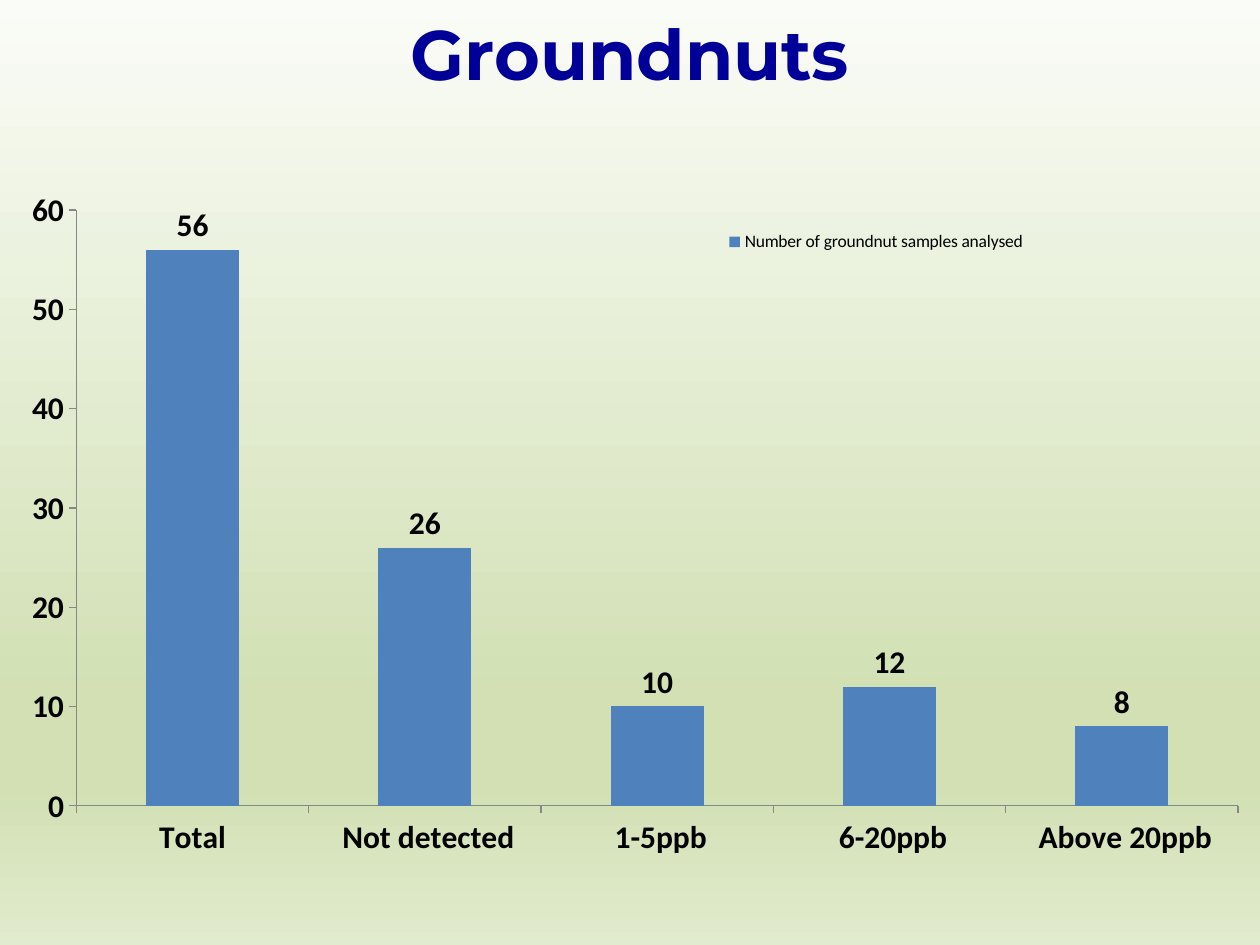
from dataclasses import dataclass

from lxml import etree
from pptx import Presentation, util as u
from pptx.chart.data import CategoryChartData
from pptx.dml.color import RGBColor
from pptx.enum import chart as charts, text
from pptx.oxml import parse_xml
from pptx.oxml.ns import nsdecls, qn

SCALE = u.Inches(1) / 126


@dataclass(frozen=True)
class Theme:
    title_font: str = "Montserrat"
    chart_font: str = "Calibri"
    title_color: str = "000099"
    text_color: str = "000000"
    bar_color: str = "4F81BD"
    axis_color: str = "878787"
    background: tuple = ((0, "FAFCF7"), (74, "D2E0B4"), (83, "D2E0B4"), (100, "E1EBCD"))
    title_size: int = 40
    label_size: int = 18
    legend_size: int = 10


def px(length):
    return u.Emu(round(length * SCALE))


def format_font(font, name, size, color, bold=False):
    font.name = name
    font.size = u.Pt(size)
    font.bold = bold
    font.color.rgb = RGBColor.from_string(color)


def write_text(frame, content, *, align, anchor, line_spacing=1.0, **font_format):
    frame.word_wrap = True
    frame.vertical_anchor = anchor
    paragraph = frame.paragraphs[0]
    paragraph.alignment = align
    paragraph.line_spacing = line_spacing
    run = paragraph.add_run()
    run.text = content
    format_font(run.font, **font_format)


def place_in_chart(element, index, chart_box, box, inner=False):
    for old_layout in element.findall(qn("c:layout")):
        element.remove(old_layout)
    left, top, width, height = chart_box
    values = {
        "x": (box[0] - left) / width,
        "y": (box[1] - top) / height,
        "w": box[2] / width,
        "h": box[3] / height,
    }
    layout = parse_xml(f"<c:layout {nsdecls('c')}><c:manualLayout/></c:layout>")
    manual = layout[0]
    settings = [("layoutTarget", "inner")] if inner else []
    settings += [("xMode", "edge"), ("yMode", "edge")]
    settings += [(key, f"{value:.4f}") for key, value in values.items()]
    for key, value in settings:
        etree.SubElement(manual, qn(f"c:{key}")).set("val", value)
    element.insert(index, layout)


class SlideBuilder:
    def __init__(self, slide, theme):
        self.slide = slide
        self.theme = theme

    def background(self):
        fill = self.slide.background.fill
        fill.gradient()
        fill.gradient_angle = 270
        stops = next(self.slide.element.iter(qn("a:gsLst")))
        for stop in list(stops):
            stops.remove(stop)
        for position, color in self.theme.background:
            stop = etree.SubElement(stops, qn("a:gs"), pos=str(position * 1000))
            etree.SubElement(stop, qn("a:srgbClr"), val=color)

    def title(self, content, box):
        shape = self.slide.shapes.add_textbox(*map(px, box))
        write_text(
            shape.text_frame,
            content,
            align=text.PP_ALIGN.CENTER,
            anchor=text.MSO_ANCHOR.MIDDLE,
            line_spacing=0.9,
            name=self.theme.title_font,
            size=self.theme.title_size,
            color=self.theme.title_color,
            bold=True,
        )

    def label_format(self, font):
        theme = self.theme
        format_font(font, theme.chart_font, theme.label_size, theme.text_color, bold=True)

    def axis(self, axis):
        axis.has_major_gridlines = False
        axis.major_tick_mark = charts.XL_TICK_MARK.OUTSIDE
        axis.minor_tick_mark = charts.XL_TICK_MARK.NONE
        axis.format.line.color.rgb = RGBColor.from_string(self.theme.axis_color)
        axis.format.line.width = u.Pt(0.75)
        self.label_format(axis.tick_labels.font)

    def column_chart(self, name, counts, box, plot_box, legend_box):
        theme = self.theme
        data = CategoryChartData()
        data.categories = list(counts)
        data.add_series(name, list(counts.values()))
        chart = self.slide.shapes.add_chart(
            charts.XL_CHART_TYPE.COLUMN_CLUSTERED, *map(px, box), data
        ).chart
        chart.has_title = False
        format_font(chart.font, theme.chart_font, theme.legend_size, theme.text_color)

        self.axis(chart.category_axis)
        self.axis(chart.value_axis)
        chart.value_axis.minimum_scale = 0
        chart.value_axis.maximum_scale = 60
        chart.value_axis.major_unit = 10

        plot = chart.plots[0]
        plot.gap_width = 150
        plot.vary_by_categories = False
        series = plot.series[0]
        series.format.fill.solid()
        series.format.fill.fore_color.rgb = RGBColor.from_string(theme.bar_color)
        labels = series.data_labels
        labels.show_value = True
        labels.position = charts.XL_LABEL_POSITION.OUTSIDE_END
        self.label_format(labels.font)

        chart.has_legend = True
        chart.legend.position = charts.XL_LEGEND_POSITION.RIGHT
        chart.legend.include_in_layout = False
        format_font(chart.legend.font, theme.chart_font, theme.legend_size, theme.text_color)

        plot_area = next(chart.element.iter(qn("c:plotArea")))
        legend = next(chart.element.iter(qn("c:legend")))
        place_in_chart(plot_area, 0, box, plot_box, inner=True)
        place_in_chart(legend, 1, box, legend_box)


def main():
    presentation = Presentation()
    presentation.slide_width = px(1260)
    presentation.slide_height = px(945)
    slide = presentation.slides.add_slide(presentation.slide_layouts[6])
    builder = SlideBuilder(slide, Theme())
    builder.background()
    builder.title("Groundnuts", (63, 0, 1134, 116))
    builder.column_chart(
        "Number of groundnut samples analysed",
        {"Total": 56, " Not detected": 26, " 1-5ppb": 10, " 6-20ppb": 12, " Above 20ppb": 8},
        box=(32, 136, 1207, 788),
        plot_box=(76, 210, 1162, 596),
        legend_box=(716, 226, 320, 32),
    )
    presentation.save("out.pptx")


if __name__ == "__main__":
    main()
